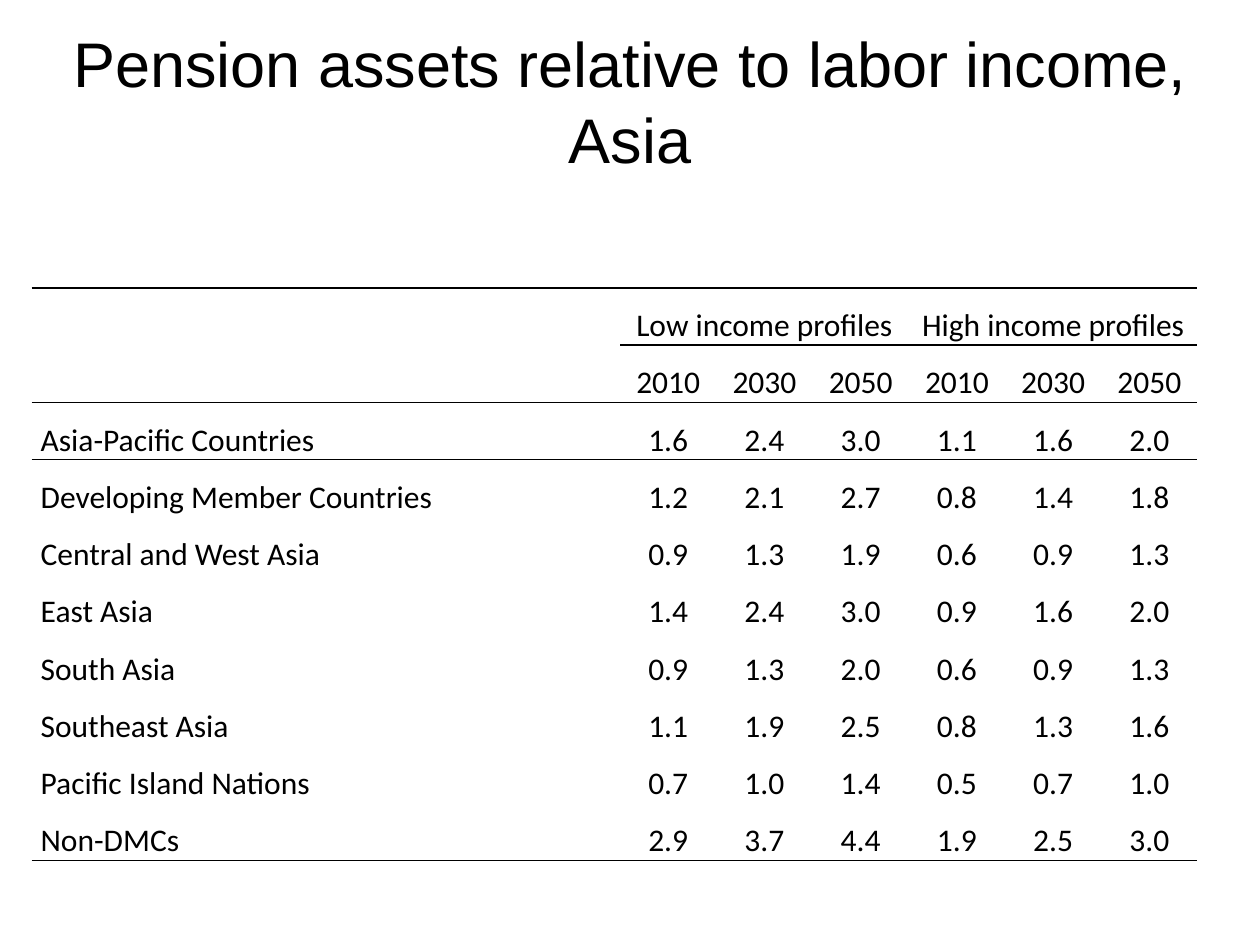
import pptx
import pptx.dml.color
import pptx.enum.text
import pptx.oxml
import pptx.oxml.ns
import pptx.util
from pptx.util import Cm

BLACK = pptx.dml.color.RGBColor(0x00, 0x00, 0x00)
NO_GRID_STYLE = "{2D5ABB26-0587-4C30-8999-92F81FD0307C}"
CENTER = pptx.enum.text.PP_ALIGN.CENTER
LEFT = pptx.enum.text.PP_ALIGN.LEFT

TITLE_FONT = {"name": "Arial", "size": pptx.util.Pt(36)}
TABLE_FONT = {"name": "Calibri", "size": pptx.util.Pt(18)}
TITLE_PLACE = {"left": Cm(0), "top": Cm(0.43), "width": Cm(25.4), "height": Cm(3.18)}
CELL_FORMAT = {
    "margin_left": Cm(0.18),
    "margin_right": Cm(0.18),
    "margin_top": Cm(0),
    "margin_bottom": Cm(0),
    "vertical_anchor": pptx.enum.text.MSO_ANCHOR.BOTTOM,
}

YEARS = ["2010", "2030", "2050"]
PROFILES = ["Low income profiles", "High income profiles"]
REGIONS = [
    ["Asia-Pacific Countries", "1.6", "2.4", "3.0", "1.1", "1.6", "2.0"],
    ["Developing Member Countries", "1.2", "2.1", "2.7", "0.8", "1.4", "1.8"],
    ["Central and West Asia", "0.9", "1.3", "1.9", "0.6", "0.9", "1.3"],
    ["East Asia", "1.4", "2.4", "3.0", "0.9", "1.6", "2.0"],
    ["South Asia", "0.9", "1.3", "2.0", "0.6", "0.9", "1.3"],
    ["Southeast Asia", "1.1", "1.9", "2.5", "0.8", "1.3", "1.6"],
    ["Pacific Island Nations", "0.7", "1.0", "1.4", "0.5", "0.7", "1.0"],
    ["Non-DMCs", "2.9", "3.7", "4.4", "1.9", "2.5", "3.0"],
]
ROWS = [
    [""] * 7,
    ["", PROFILES[0], "", "", PROFILES[1], "", ""],
    [""] + YEARS * len(PROFILES),
] + REGIONS
HEADER_ROWS = len(ROWS) - len(REGIONS)
RULED_ROWS = {0, 1, 2, len(ROWS) - 1}


def apply_format(target, values):
    for name, value in values.items():
        setattr(target, name, value)


def write_text(para, text, font, alignment):
    para.alignment = alignment
    span = para.add_run()
    span.text = text
    apply_format(span.font, font)
    span.font.color.rgb = BLACK


def add_title(page, text):
    box = page.shapes.title
    apply_format(box, TITLE_PLACE)
    frame = box.text_frame
    frame.auto_size = pptx.enum.text.MSO_AUTO_SIZE.NONE
    frame.vertical_anchor = pptx.enum.text.MSO_ANCHOR.MIDDLE
    write_text(frame.paragraphs[0], text, TITLE_FONT, CENTER)


def add_border(cell, side):
    cell._tc.get_or_add_tcPr().append(pptx.oxml.parse_xml(
        f'<a:ln{side} {pptx.oxml.ns.nsdecls("a")} w="12700">'
        f'<a:solidFill><a:srgbClr val="{BLACK}"/></a:solidFill></a:ln{side}>'
    ))


def format_cell(cell, row, column, text):
    apply_format(cell, CELL_FORMAT)
    if row - 1 in RULED_ROWS and (row, column) != (2, 0):
        add_border(cell, "T")
    if row in RULED_ROWS:
        add_border(cell, "B")
    cell.fill.background()
    if text:
        is_label = column == 0 and row >= HEADER_ROWS
        para = cell.text_frame.paragraphs[0]
        write_text(para, text, TABLE_FONT, LEFT if is_label else CENTER)


def add_pension_table(page):
    frame = page.shapes.add_table(
        len(ROWS), len(ROWS[0]), Cm(0.64), Cm(4.65), Cm(23.5), Cm(12.7)
    )
    table = frame.table
    apply_format(table, {"first_row": False, "horz_banding": False})
    style = table._tbl.tblPr.find(pptx.oxml.ns.qn("a:tableStyleId"))
    style.text = NO_GRID_STYLE
    for index, column in enumerate(table.columns):
        column.width = Cm(1.94) if index else Cm(11.86)
    for row, texts in enumerate(ROWS):
        table.rows[row].height = Cm(12.7 / len(ROWS))
        for column, text in enumerate(texts):
            format_cell(table.cell(row, column), row, column, text)
    table.cell(0, 0).merge(table.cell(0, 6))
    table.cell(1, 0).merge(table.cell(2, 0))
    for start in (1, 4):
        table.cell(1, start).merge(table.cell(1, start + len(YEARS) - 1))


def main():
    deck = pptx.Presentation()
    apply_format(deck, {"slide_width": Cm(25.4), "slide_height": Cm(19.05)})
    page = deck.slides.add_slide(deck.slide_layouts[5])
    add_title(page, "Pension assets relative to labor income, Asia")
    add_pension_table(page)
    deck.save("out.pptx")


if __name__ == "__main__":
    main()
